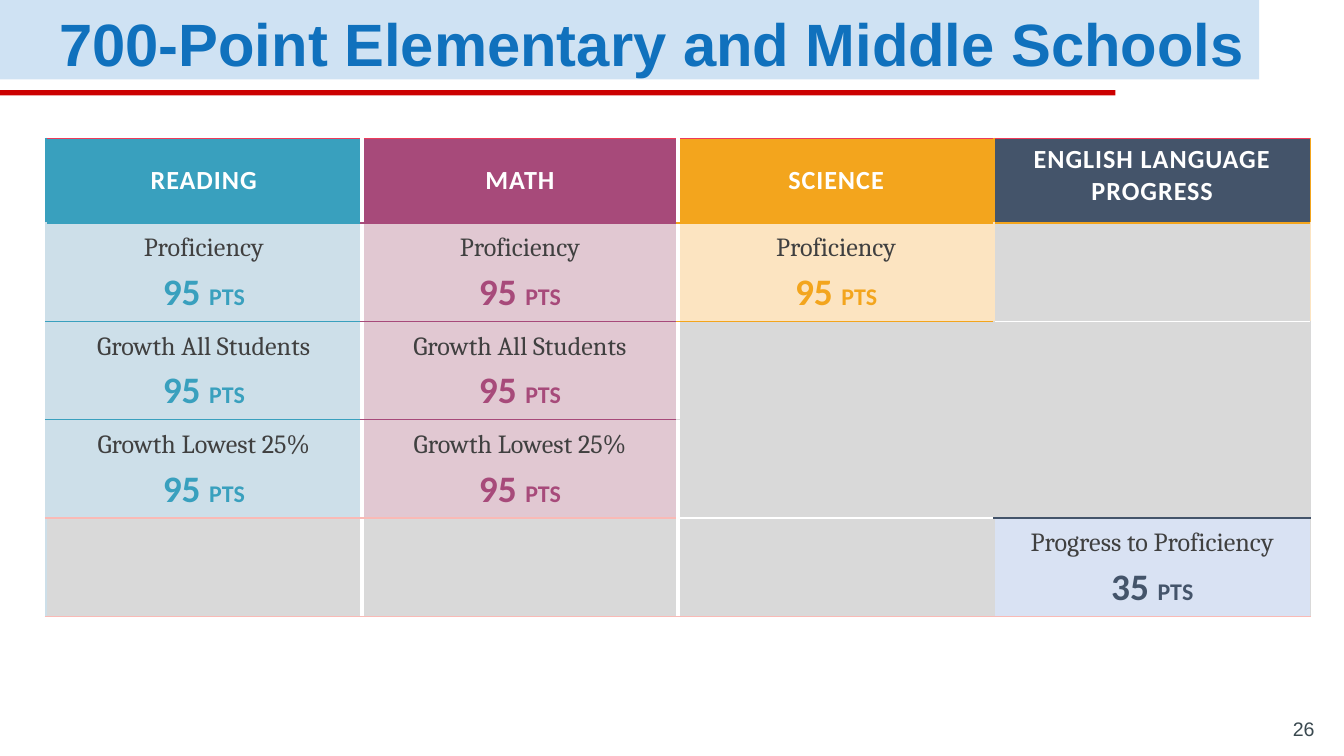
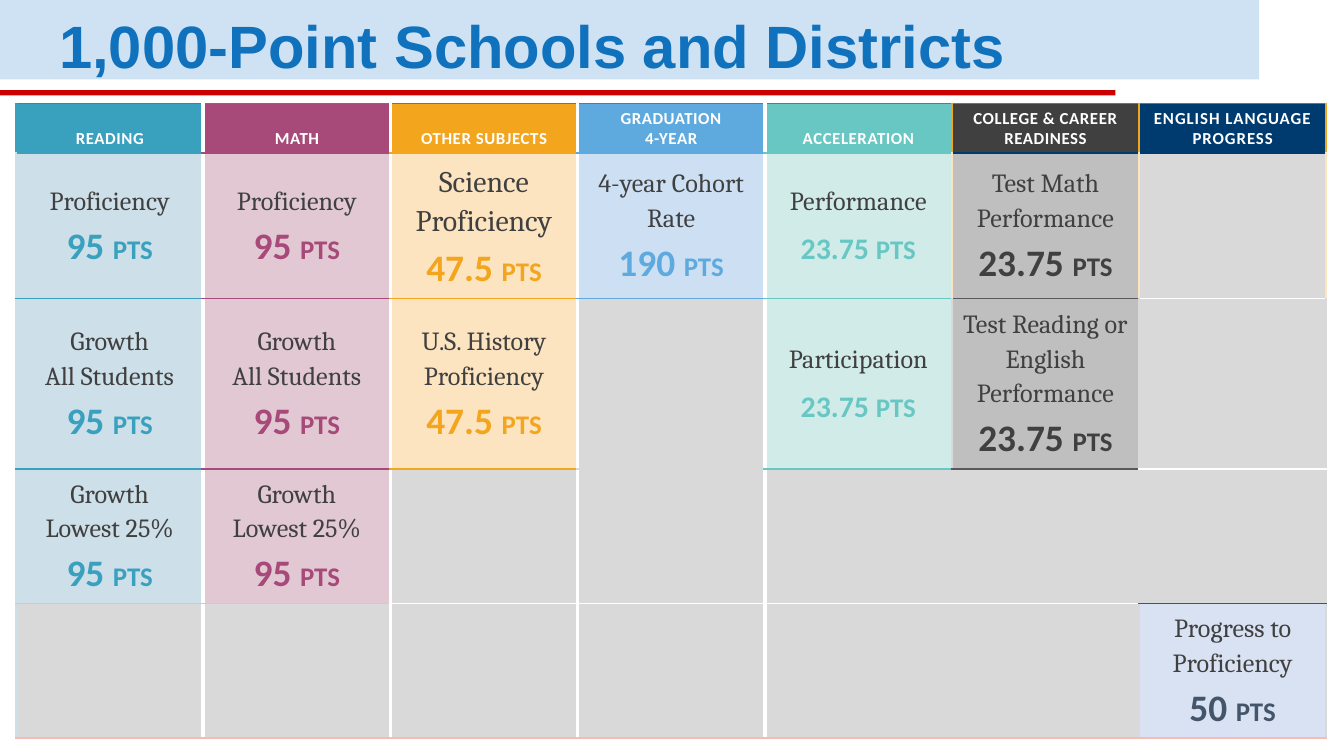
from copy import deepcopy

from lxml.etree import SubElement
from pptx import Presentation
from pptx.dml.color import RGBColor as RGB
from pptx.enum.shapes import MSO_SHAPE as SHAPE
from pptx.enum.text import MSO_ANCHOR as ANCHOR, MSO_AUTO_SIZE as AUTO, PP_ALIGN as ALIGN
from pptx.oxml.ns import qn
from pptx.util import Inches, Pt

COLORS = {
    "band": "CFE2F3", "rule": "CC0000", "title": "1071BD", "number": "3A4950",
    "white": "FFFFFF", "text": "404040", "empty": "D9D9D9",
    "red": "EE3A5A", "pink": "F9BAB6", "gray": "595959",
    "reading": "39A0BE", "reading_pale": "CDDFE9",
    "math": "A74A7A", "math_pale": "E1C8D2",
    "science": "F3A51D", "science_pale": "FCE4C1",
    "graduation": "5EAADE", "graduation_pale": "CCDFF3",
    "acceleration": "68C7C3", "acceleration_pale": "D1EBE9",
    "text_pale": "BFBFBF", "navy": "003B70",
    "english": "44546A", "english_pale": "D9E2F3",
}


def add_text(p, text, size, color, font="Calibri", bold=True, **attrs):
    """Add runs to a paragraph, with a line break at each newline."""
    for i, part in enumerate(text.split("\n")):
        if i:
            p.add_line_break()
            p._p[-1].append(deepcopy(r._r.rPr))
        if part:
            r = p.add_run()
            r.text = part
            r.font.size, r.font.name, r.font.bold = Pt(size), font, bold
            r.font.color.rgb = RGB.from_string(COLORS[color])
            for key, value in attrs.items():
                r._r.rPr.set(key, str(value))


def set_borders(cell, *borders):
    """Set the left, right, top and bottom borders, each a (color, points) pair."""
    tcPr = cell._tc.get_or_add_tcPr()
    for i, (side, (color, width)) in enumerate(zip("LRTB", borders)):
        ln = SubElement(tcPr, qn(f"a:ln{side}"), w=str(Pt(width)))
        fill = SubElement(ln, qn("a:solidFill"))
        SubElement(fill, qn("a:srgbClr"), val=COLORS[color])
        tcPr.insert(i, ln)


# Each column: heading, its fill, color of the points, four cells (label, points),
# and the colors of the lines under the heading and under the first three cells.
SCHOOLS_700 = [
    (name, key, key,
     [("Proficiency", "95"), ("Growth All Students", "95"), ("Growth Lowest 25%", "95"), None],
     [key, key, key, "pink"])
    for name, key in (("READING", "reading"), ("MATH", "math"))
] + [
    ("SCIENCE", "science", "science", [("Proficiency", "95"), None, None, None],
     ["science", "science", "empty", "white"]),
    ("ENGLISH LANGUAGE PROGRESS", "english", "english",
     [None, None, None, ("Progress to Proficiency", "35")],
     ["science", "white", "empty", "english"]),
]

SCHOOLS_1000 = [
    (name, key, key,
     [("Proficiency", "95"), ("Growth\nAll Students", "95"), ("Growth\nLowest 25%", "95"), None],
     [key, key, key, "pink"])
    for name, key in (("READING", "reading"), ("MATH", "math"))
] + [
    ("OTHER SUBJECTS", "science", "science",
     [("Science\nProficiency", "47.5"), ("U.S. History Proficiency", "47.5"), None, None],
     ["science", "science", "science", "white"]),
    ("GRADUATION\n4-YEAR", "graduation", "graduation",
     [("4-year Cohort Rate", "190"), None, None, None],
     ["graduation", "graduation", "empty", "white"]),
    ("ACCELERATION", "acceleration", "acceleration",
     [("Performance", "23.75"), ("Participation", "23.75"), None, None],
     ["acceleration", "acceleration", "acceleration", "white"]),
    ("COLLEGE & CAREER READINESS", "text", "text",
     [("Test Math\nPerformance", "23.75"), ("Test Reading or English\nPerformance", "23.75"),
      None, None],
     ["navy", "gray", "gray", "white"]),
    ("ENGLISH LANGUAGE PROGRESS", "navy", "english",
     [None, None, None, ("Progress to Proficiency", "50")],
     ["navy", "white", "white", "english"]),
]

SLIDES = [
    dict(title="700-Point Elementary and Middle Schools", title_size=(9.03, 0.49), number="26",
         columns=SCHOOLS_700, box=(0.34, 1.03, 9.41), rows=[0.63] + [0.66] * 4, gutters=2,
         inset=(0.08, 0.04), head_size=14, head_anchor=ANCHOR.MIDDLE, spacing=50,
         pts_size=16, after=10),
    dict(title="1,000-Point Schools and Districts", title_size=(9.11, 0.53), number=None,
         columns=SCHOOLS_1000, box=(0.12, 0.77, 9.75), rows=[0.37, 1.08, 1.27, 1, 1], gutters=4,
         inset=(0.07, 0.03), head_size=9, head_anchor=ANCHOR.BOTTOM, spacing=30,
         pts_size=18, after=0),
]

prs = Presentation()
prs.slide_width, prs.slide_height = Inches(10), Inches(10 * 9 / 16)
layout = prs.slide_layouts[5]

for number, content in enumerate(SLIDES):
    s = prs.slides.add_slide(layout)

    # The band and the red rule are drawn once and moved to the shared layout
    if number == 0:
        for i, (top, width, height, color) in enumerate(
                [(0, 9.37, 0.59, "band"), (0.67, 8.3, 0.04, "rule")]):
            sp = s.shapes.add_shape(SHAPE.RECTANGLE, 0, Inches(top), Inches(width), Inches(height))
            sp.shadow.inherit = False
            sp.fill.solid()
            sp.fill.fore_color.rgb = RGB.from_string(COLORS[color])
            sp.line.fill.background()
            sp.element.xpath("p:nvSpPr/p:cNvPr")[0].set("id", str(20 + i))
            layout.shapes.element.insert(2 + i, sp.element)

    title = s.shapes.title
    title.left, title.top = Inches(0.34), Inches(0.03)
    title.width, title.height = (Inches(n) for n in content["title_size"])
    tf = title.text_frame
    tf.auto_size, tf.word_wrap, tf.vertical_anchor = AUTO.NONE, True, ANCHOR.MIDDLE
    tf.margin_left = tf.margin_right = tf.margin_top = tf.margin_bottom = Inches(0.1)
    p = tf.paragraphs[0]
    p.alignment, p.line_spacing, p.space_after = ALIGN.LEFT, 1.15, Pt(16)
    add_text(p, content["title"], 32, "title", "Arial")

    if content["number"]:
        box = s.shapes.add_textbox(Inches(9.28), Inches(5.34), Inches(0.6), Inches(0.26))
        tf = box.text_frame
        tf.word_wrap, tf.vertical_anchor = True, ANCHOR.BOTTOM
        tf.margin_left = tf.margin_right = tf.margin_top = tf.margin_bottom = Inches(0.1)
        p = tf.paragraphs[0]
        p.alignment = ALIGN.RIGHT
        add_text(p, content["number"], 10.5, "number", "Arial", False)

    columns, rows = content["columns"], content["rows"]
    left, top, width = (Inches(n) for n in content["box"])
    table = s.shapes.add_table(len(rows), len(columns), left, top, width,
                               Inches(sum(rows))).table
    table.horz_banding = False
    for row, height in zip(table.rows, rows):
        row.height = Inches(height)

    for c, (name, fill, ink, cells, lines) in enumerate(columns):
        table.columns[c].width = width // len(columns)
        edges = ["red", *lines, "pink"]
        for r_no in range(len(rows)):
            cell = table.cell(r_no, c)
            side, end = (Inches(n) for n in content["inset"])
            cell.margin_left = cell.margin_right = side
            cell.margin_top = cell.margin_bottom = end
            p = cell.text_frame.paragraphs[0]
            p.alignment = ALIGN.CENTER
            entry = cells[r_no - 1] if r_no else None

            if r_no == 0:
                color = fill
                long_name = name.startswith("ENGLISH")
                middle = content["head_anchor"] == ANCHOR.MIDDLE
                cell.vertical_anchor = (ANCHOR.TOP if long_name and middle
                                        else content["head_anchor"])
                add_text(p, name, content["head_size"], "white",
                         spc=50 if long_name else content["spacing"])
            elif entry:
                color = f"{ink}_pale"
                label, points = entry
                cell.vertical_anchor = ANCHOR.MIDDLE
                p.line_spacing, p.space_after = 1.15, Pt(content["after"])
                add_text(p, label + "\n", 16 if label.startswith("Science") else 14,
                         "text", "Cambria", False)
                caps = "small" if ink == "acceleration" else "none"
                add_text(p, points + " ", 20, ink, cap=caps)
                add_text(p, "pts", content["pts_size"], ink, cap="small")
            else:
                color = "empty"

            cell.fill.solid()
            cell.fill.fore_color.rgb = RGB.from_string(COLORS[color])
            thin = (["science", "science_pale"] + ["empty"] * 3)[r_no], 1
            outer = "reading_pale" if r_no else "reading", 1
            gutter = "white", 2.25
            set_borders(cell,
                        outer if c == 0 else gutter if c <= content["gutters"] else thin,
                        gutter if c < content["gutters"] else thin,
                        (edges[r_no], 1), (edges[r_no + 1], 1))

prs.save("out.pptx")
